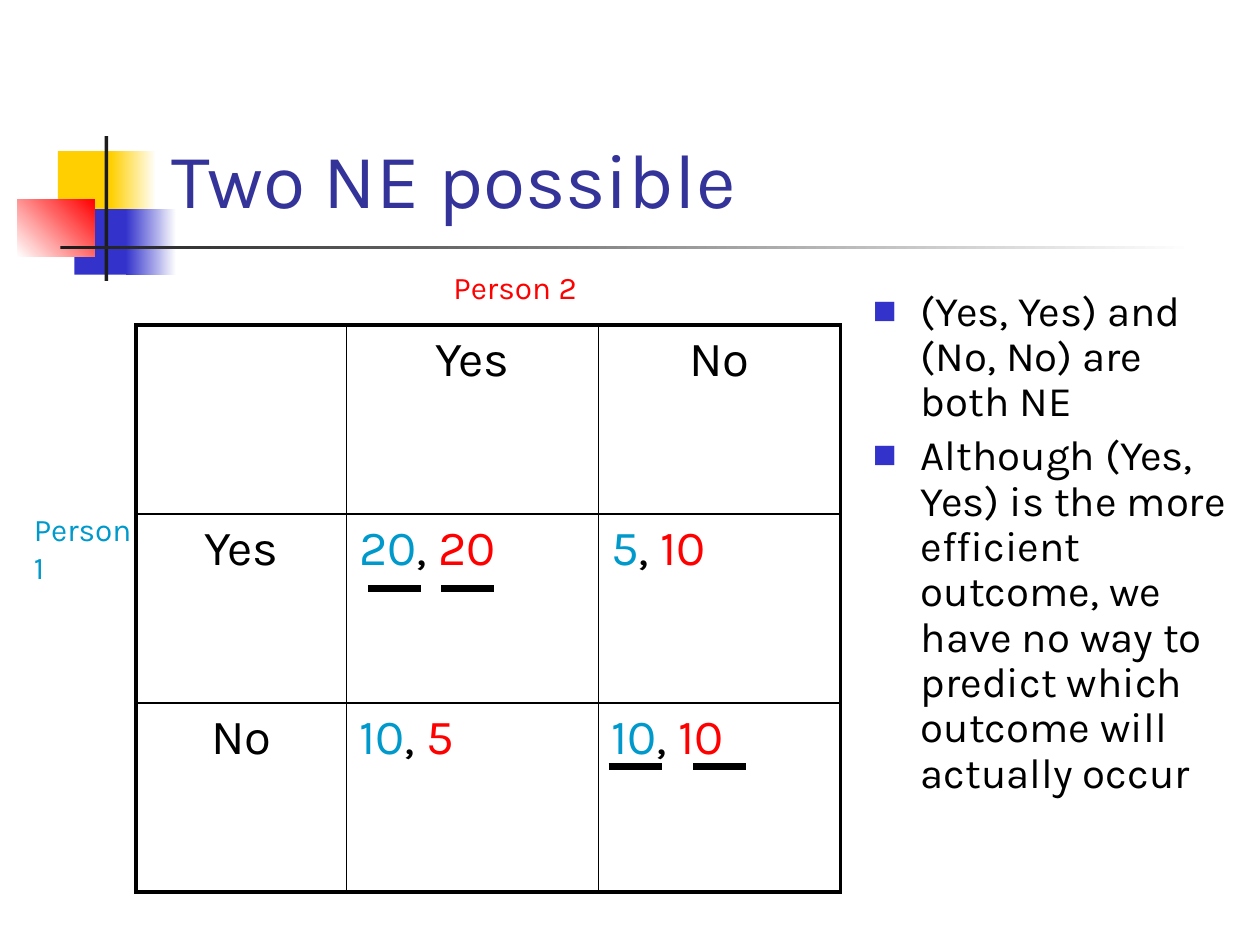
from dataclasses import dataclass

from lxml import etree
from pptx import Presentation
from pptx.dml.color import RGBColor
from pptx.enum.shapes import MSO_CONNECTOR, MSO_SHAPE
from pptx.enum.text import MSO_ANCHOR, MSO_AUTO_SIZE, PP_ALIGN
from pptx.oxml.ns import qn
from pptx.util import Inches, Pt

RECTANGLE = MSO_SHAPE.RECTANGLE
STRAIGHT = MSO_CONNECTOR.STRAIGHT
LEFT, CENTER = PP_ALIGN.LEFT, PP_ALIGN.CENTER
TITLE_ONLY = 5


@dataclass(frozen=True)
class Theme:
    font: str = "Karla"
    title: str = "333399"
    text: str = "000000"
    person_1: str = "0099CC"
    person_2: str = "FF0000"
    bullet: str = "3333CC"
    yellow: str = "FFCF01"
    blue: str = "3333CC"
    red: str = "FF0000"
    dark: str = "1C1C1C"
    white: str = "FFFFFF"
    title_size: int = 44
    table_size: int = 28
    body_size: int = 24
    label_size: int = 18
    outer_border: float = 2.25
    inner_border: float = 1
    underline: float = 4


THEME = Theme()

# left, top, width, height, colours (two make a gradient), angle
DECORATION = [
    (0.46, 1.2, 0.48, 0.52, (THEME.yellow,), 0),
    (0.88, 1.2, 0.36, 0.52, (THEME.yellow, THEME.white), 0),
    (0.59, 1.66, 0.46, 0.52, (THEME.blue,), 0),
    (1, 1.66, 0.4, 0.52, (THEME.blue, THEME.white), 0),
    (0.14, 1.58, 0.61, 0.46, (THEME.white, THEME.red), 45),
    (0.83, 1.08, 0.03, 1.15, (THEME.dark,), 0),
    (0.48, 1.95, 9, 0.03, (THEME.dark, THEME.white), 0),
]
STRATEGIES = ["Yes", "No"]
PAYOFFS = [[(20, 20), (5, 10)], [(10, 5), (10, 10)]]
BULLETS = [
    "(Yes, Yes) and (No, No) are both NE",
    "Although (Yes, Yes) is the more efficient outcome, we have no way to "
    "predict which outcome will actually occur",
]
UNDERLINE_WIDTH = 0.42
UNDERLINES = [(2.92, 4.67), (3.5, 4.67), (4.83, 6.08), (5.5, 6.08)]


def apply_format(target, values):
    for name, value in values.items():
        setattr(target, name, value)


def add_run(paragraph, text, size, color):
    run = paragraph.add_run()
    run.text = text
    apply_format(run.font, {"name": THEME.font, "size": Pt(size)})
    run.font.color.rgb = RGBColor.from_string(color)


def add_text_box(slide, box):
    shape = slide.shapes.add_textbox(*map(Inches, box))
    shape.text_frame.word_wrap = True
    return shape.text_frame


def add_decoration(slide, parts):
    for *box, colors, angle in parts:
        shape = slide.shapes.add_shape(RECTANGLE, *map(Inches, box))
        shape.shadow.inherit = False
        shape.line.fill.background()
        if len(colors) == 1:
            shape.fill.solid()
            shape.fill.fore_color.rgb = RGBColor.from_string(colors[0])
            continue
        shape.fill.gradient()
        shape.fill.gradient_angle = angle
        for stop, color in zip(shape.fill.gradient_stops, colors):
            stop.color.rgb = RGBColor.from_string(color)


def place_title(slide, box, text):
    title = slide.shapes.title
    apply_format(title, dict(zip(("left", "top", "width", "height"), map(Inches, box))))
    apply_format(title.text_frame, {
        "vertical_anchor": MSO_ANCHOR.BOTTOM,
        "auto_size": MSO_AUTO_SIZE.NONE,
        "word_wrap": True,
    })
    paragraph = title.text_frame.paragraphs[0]
    paragraph.alignment = LEFT
    add_run(paragraph, text, THEME.title_size, THEME.title)


def set_bullet(paragraph):
    properties = paragraph._p.get_or_add_pPr()
    properties.set("marL", str(Inches(0.38)))
    properties.set("indent", str(-Inches(0.38)))
    color = etree.SubElement(properties, qn("a:buClr"))
    etree.SubElement(color, qn("a:srgbClr"), val=THEME.bullet)
    etree.SubElement(properties, qn("a:buSzPct"), val="60000")
    etree.SubElement(properties, qn("a:buFont"), typeface=THEME.font)
    etree.SubElement(properties, qn("a:buChar"), char="■")


def add_bullets(slide, box, items):
    frame = add_text_box(slide, box)
    for index, item in enumerate(items):
        paragraph = frame.add_paragraph() if index else frame.paragraphs[0]
        apply_format(paragraph, {"line_spacing": 0.9, "space_before": Pt(5 if index else 0)})
        set_bullet(paragraph)
        add_run(paragraph, item, THEME.body_size, THEME.text)


def set_borders(cell, widths):
    properties = cell._tc.get_or_add_tcPr()
    for side, width in zip("LRTB", widths):
        line = etree.SubElement(properties, qn(f"a:ln{side}"), w=str(Pt(width)))
        fill = etree.SubElement(line, qn("a:solidFill"))
        etree.SubElement(fill, qn("a:srgbClr"), val=THEME.text)


def cell_runs(row, column):
    """Return the (text, colour) runs of one cell of the payoff matrix."""
    if row and column:
        first, second = PAYOFFS[row - 1][column - 1]
        return [(str(first), THEME.person_1), (", ", THEME.text), (str(second), THEME.person_2)]
    if row or column:
        return [(STRATEGIES[max(row, column) - 1], THEME.text)]
    return []


def add_payoff_matrix(slide, box, column_widths):
    count = len(column_widths)
    last = count - 1
    table = slide.shapes.add_table(count, count, *map(Inches, box)).table
    apply_format(table, {"first_row": False, "horz_banding": False})
    for column, width in zip(table.columns, column_widths):
        column.width = Inches(width)
    for row in range(count):
        for column in range(count):
            cell = table.cell(row, column)
            on_edge = (column == 0, column == last, row == 0, row == last)
            set_borders(cell, [THEME.outer_border if edge else THEME.inner_border
                               for edge in on_edge])
            cell.fill.background()
            paragraph = cell.text_frame.paragraphs[0]
            paragraph.alignment = LEFT if row and column else CENTER
            for text, color in cell_runs(row, column):
                add_run(paragraph, text, THEME.table_size, color)


def add_label(slide, box, text, color):
    add_run(add_text_box(slide, box).paragraphs[0], text, THEME.label_size, color)


def add_underline(slide, left, top, width):
    line = slide.shapes.add_connector(
        STRAIGHT, *map(Inches, (left, top, left + width, top)))
    line.line.width = Pt(THEME.underline)
    line.line.color.rgb = RGBColor.from_string(THEME.text)
    etree.SubElement(line._element.spPr, qn("a:effectLst"))


def main():
    presentation = Presentation()
    apply_format(presentation, {"slide_width": Inches(10), "slide_height": Inches(7.5)})
    slide = presentation.slides.add_slide(presentation.slide_layouts[TITLE_ONLY])
    add_decoration(slide, DECORATION)
    place_title(slide, (1.26, 0.23, 8.52, 1.6), "Two NE possible")
    add_bullets(slide, (6.83, 2.25, 3, 4.92), BULLETS)
    add_payoff_matrix(slide, (1.08, 2.58, 5.59, 4.5), (1.67, 2, 1.92))
    add_label(slide, (0.17, 4, 1, 0.7), "Person 1", THEME.person_1)
    add_label(slide, (3.5, 2.08, 1.42, 0.4), "Person 2", THEME.person_2)
    for left, top in UNDERLINES:
        add_underline(slide, left, top, UNDERLINE_WIDTH)
    presentation.save("out.pptx")


if __name__ == "__main__":
    main()
